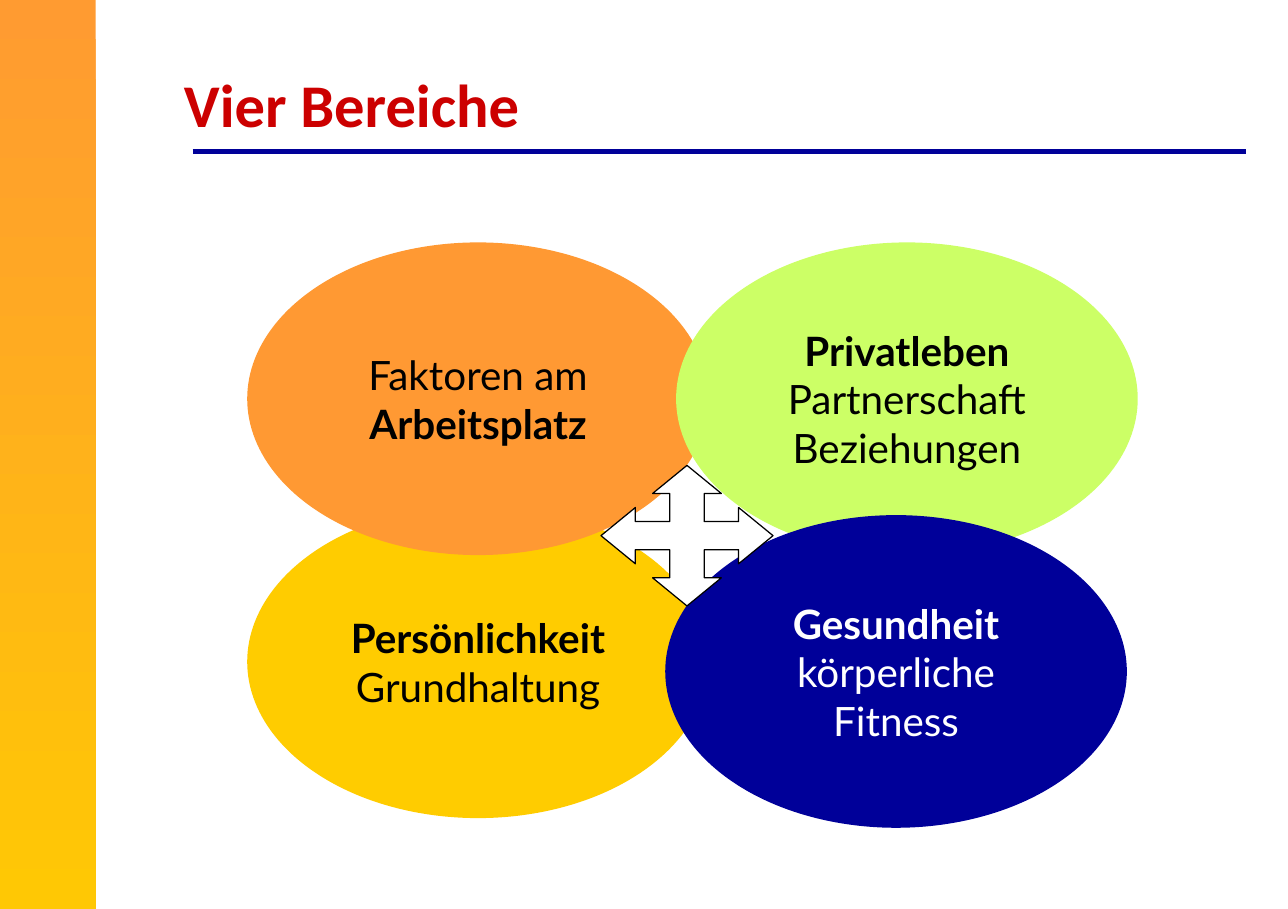
from pptx import Presentation
from pptx.dml.color import RGBColor
from pptx.enum.shapes import MSO_CONNECTOR, MSO_SHAPE
from pptx.enum.text import MSO_ANCHOR, PP_ALIGN
from pptx.oxml import parse_xml
from pptx.util import Inches, Pt

TITLE = "Vier Bereiche"
AREAS = [
    (2.04, 4.17, "yellow", "black", [("Persönlichkeit", True), ("Grundhaltung", False)]),
    (2.04, 2, "orange", "black", [("Faktoren am", False), ("Arbeitsplatz", True)]),
    (5.58, 2, "green", "black",
     [("Privatleben", True), ("Partnerschaft", False), ("Beziehungen", False)]),
    (5.49, 4.25, "blue", "white",
     [("Gesundheit", True), ("körperliche", False), ("Fitness", False)]),
]
OVAL_SIZE = (3.81, 2.58)
ARROW_CENTER = (5.67, 4.42)
ARROW_HALF = (0.71, 0.58)
ARROW_ARM = [(0, -1), (-0.4, -0.6), (-0.2, -0.6), (-0.2, -0.2), (-0.6, -0.2), (-0.6, -0.4)]

THEME = {
    "colors": {
        "red": "CC0000", "blue": "000099", "yellow": "FFCC00", "orange": "FF9933",
        "green": "CCFF66", "black": "000000", "white": "FFFFFF",
        "bar_top": "FF9B31", "bar_bottom": "FFC804",
    },
    "title": ("Calibri", 36),
    "body": ("Lato", 24),
}


def color(name):
    return RGBColor.from_string(THEME["colors"][name])


def add_run(p, text, style, tint, bold):
    r = p.add_run()
    r.text = text
    r.font.name, size = THEME[style]
    r.font.size = Pt(size)
    r.font.bold = bold
    r.font.color.rgb = color(tint)


def add_sidebar(s):
    sp = s.shapes.add_shape(MSO_SHAPE.RECTANGLE, 0, 0, Inches(0.79), Inches(7.5))
    sp.shadow.inherit = False
    sp.line.fill.background()
    sp.fill.gradient()
    sp.fill.gradient_angle = 270
    for stop, name, pos in zip(sp.fill.gradient_stops, ("bar_top", "bar_bottom"), (0, 1)):
        stop.color.rgb = color(name)
        stop.position = pos


def add_title(s):
    sp = s.shapes.add_textbox(Inches(1.42), Inches(0.5), Inches(8.86), Inches(0.7))
    sp.text_frame.word_wrap = True
    add_run(sp.text_frame.paragraphs[0], TITLE, "title", "red", True)
    rule = s.shapes.add_connector(
        MSO_CONNECTOR.STRAIGHT, Inches(1.59), Inches(1.25), Inches(10.28), Inches(1.25))
    rule.line.color.rgb = color("blue")
    rule.line.width = Pt(3)
    rule._element.spPr.append(parse_xml(
        '<a:effectLst xmlns:a="http://schemas.openxmlformats.org/drawingml/2006/main"/>'))


def add_area(s, left, top, fill, tint, lines):
    sp = s.shapes.add_shape(
        MSO_SHAPE.OVAL, Inches(left), Inches(top), *(Inches(v) for v in OVAL_SIZE))
    sp.shadow.inherit = False
    sp.fill.solid()
    sp.fill.fore_color.rgb = color(fill)
    sp.line.fill.background()
    tf = sp.text_frame
    tf.word_wrap = False
    tf.vertical_anchor = MSO_ANCHOR.MIDDLE
    for i, (text, bold) in enumerate(lines):
        p = tf.add_paragraph() if i else tf.paragraphs[0]
        p.alignment = PP_ALIGN.CENTER
        add_run(p, text, "body", tint, bold)


def add_arrow(s):
    outline, arm = [], ARROW_ARM
    for _ in range(4):
        outline += arm
        arm = [(y, -x) for x, y in arm]
    (cx, cy), (hx, hy) = ARROW_CENTER, ARROW_HALF
    points = [(Inches(cx + hx * x), Inches(cy + hy * y)) for x, y in outline]
    builder = s.shapes.build_freeform(*points[0])
    builder.add_line_segments(points[1:], close=True)
    sp = builder.convert_to_shape()
    sp.shadow.inherit = False
    sp.fill.solid()
    sp.fill.fore_color.rgb = color("white")
    sp.line.color.rgb = color("black")
    sp.line.width = Pt(0.75)


def main():
    prs = Presentation()
    prs.slide_width, prs.slide_height = Inches(10.63), Inches(7.5)
    s = prs.slides.add_slide(prs.slide_layouts[6])
    add_sidebar(s)
    add_title(s)
    for area in AREAS:
        add_area(s, *area)
    add_arrow(s)
    prs.save("out.pptx")


if __name__ == "__main__":
    main()
